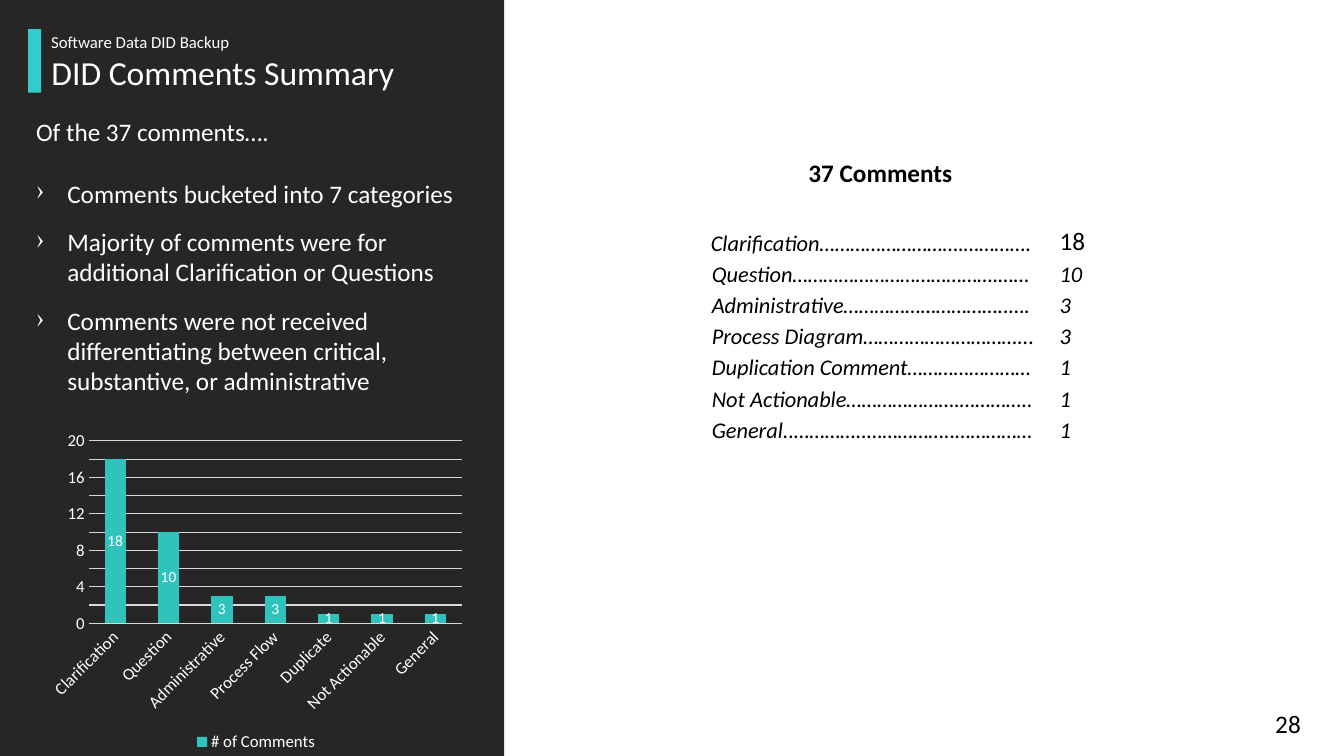
from dataclasses import dataclass

from lxml import etree
from pptx import Presentation
from pptx.chart.data import CategoryChartData
from pptx.dml.color import RGBColor
from pptx.enum.chart import XL_CHART_TYPE, XL_LABEL_POSITION, XL_LEGEND_POSITION, XL_TICK_MARK
from pptx.enum.shapes import MSO_SHAPE
from pptx.enum.text import MSO_ANCHOR, PP_ALIGN
from pptx.oxml.ns import qn
from pptx.util import Inches, Pt

RECTANGLE = MSO_SHAPE.RECTANGLE
TOP, BOTTOM = MSO_ANCHOR.TOP, MSO_ANCHOR.BOTTOM
LEFT = PP_ALIGN.LEFT
COLUMN_STACKED = XL_CHART_TYPE.COLUMN_STACKED
LABEL_CENTER = XL_LABEL_POSITION.CENTER
LEGEND_BOTTOM = XL_LEGEND_POSITION.BOTTOM
NO_TICK = XL_TICK_MARK.NONE


@dataclass(frozen=True)
class Theme:
    font: str = "Calibri"
    panel: RGBColor = RGBColor(0x26, 0x26, 0x26)
    accent: RGBColor = RGBColor(0x33, 0xCC, 0xCC)
    column: RGBColor = RGBColor(0x30, 0xC2, 0xBC)
    grid: RGBColor = RGBColor(0xD9, 0xD9, 0xD9)
    white: RGBColor = RGBColor(0xFF, 0xFF, 0xFF)
    black: RGBColor = RGBColor(0, 0, 0)
    title: int = 24
    body: int = 18
    table: int = 16
    small: int = 12
    label: int = 11


THEME = Theme()

BULLETS = [
    "Comments bucketed into 7 categories",
    "Majority of comments were for additional Clarification or Questions",
    "Comments were not received differentiating between critical, substantive, or administrative",
]
CHART_COUNTS = {
    "Clarification": 18, "Question": 10, "Administrative": 3, "Process Flow": 3,
    "Duplicate": 1, "Not Actionable": 1, "General": 1,
}
TABLE_ROWS = [
    ("Clarification……………………….………….", "18"),
    ("Question………………………………….……", "10"),
    ("Administrative…………………………..….", "3"),
    ("Process Diagram…………………………...", "3"),
    ("Duplication Comment……………………", "1"),
    ("Not Actionable………………….…………..", "1"),
    ("General..…………..……………..……………", "1"),
]


def style_font(font, size, color, bold=False, italic=False):
    font.name = THEME.font
    font.size = Pt(size)
    font.color.rgb = color
    font.bold = bold
    font.italic = italic


def add_run(paragraph, text, size, color, **emphasis):
    run = paragraph.add_run()
    run.text = text
    style_font(run.font, size, color, **emphasis)


def add_block(slide, box, color):
    block = slide.shapes.add_shape(RECTANGLE, *map(Inches, box))
    block.shadow.inherit = False
    block.fill.solid()
    block.fill.fore_color.rgb = color
    block.line.fill.background()
    return block


def add_text(slide, box, text, size, color, **emphasis):
    text_frame = slide.shapes.add_textbox(*map(Inches, box)).text_frame
    text_frame.word_wrap = True
    add_run(text_frame.paragraphs[0], text, size, color, **emphasis)
    return text_frame


def add_bullet(paragraph, indent):
    properties = paragraph._p.get_or_add_pPr()
    properties.set("marL", str(Inches(indent)))
    properties.set("indent", str(-Inches(indent)))
    etree.SubElement(properties, qn("a:buChar")).set("char", "›")


def build_header(slide, box):
    left, top, width, height = box
    bar_width = 0.13
    text_left = left + bar_width
    add_block(slide, (left, top, bar_width, height), THEME.accent)
    kicker = add_text(slide, (text_left, top, 4.73, 0.3), "Software Data DID Backup",
                      THEME.small, THEME.white)
    kicker.paragraphs[0].line_spacing = 0.9

    title = slide.shapes.title
    title.left, title.top = Inches(text_left), Inches(top + 0.22)
    title.width, title.height = Inches(width - bar_width), Inches(0.56)
    title.text_frame.vertical_anchor = TOP
    paragraph = title.text_frame.paragraphs[0]
    paragraph.alignment = LEFT
    paragraph.line_spacing = 0.9
    add_run(paragraph, "DID Comments Summary", THEME.title, THEME.white)


def build_findings(slide, box):
    text_frame = add_text(slide, box, "Of the 37 comments….", THEME.body, THEME.white)
    for index, bullet in enumerate(BULLETS):
        paragraph = text_frame.add_paragraph()
        add_bullet(paragraph, 0.31)
        paragraph.space_before = Pt(13 if index else 22)
        add_run(paragraph, bullet, THEME.body, THEME.white)


def set_plot_layout(chart, **fractions):
    plot_area = chart._chartSpace.chart.plotArea
    for old_layout in plot_area.findall(qn("c:layout")):
        plot_area.remove(old_layout)
    layout = etree.Element(qn("c:layout"))
    manual = etree.SubElement(layout, qn("c:manualLayout"))
    settings = {"layoutTarget": "inner", "xMode": "edge", "yMode": "edge", **fractions}
    for name, value in settings.items():
        etree.SubElement(manual, qn(f"c:{name}")).set("val", str(value))
    plot_area.insert(0, layout)


def build_chart(slide, box):
    data = CategoryChartData()
    data.categories = list(CHART_COUNTS)
    data.add_series("# of Comments", list(CHART_COUNTS.values()))
    chart = slide.shapes.add_chart(COLUMN_STACKED, *map(Inches, box), data).chart
    chart.has_title = False
    style_font(chart.font, THEME.small, THEME.white)
    set_plot_layout(chart, x=0.11, y=0.05, w=0.87, h=0.55)

    # Columns and their values
    plot = chart.plots[0]
    plot.gap_width, plot.overlap = 150, 100
    plot.vary_by_categories = False
    fill = plot.series[0].format.fill
    fill.solid()
    fill.fore_color.rgb = THEME.column
    plot.has_data_labels = True
    labels = plot.data_labels
    labels.show_value = True
    labels.position = LABEL_CENTER
    style_font(labels.font, THEME.label, THEME.white)

    # Axes
    for axis in (chart.category_axis, chart.value_axis):
        axis.major_tick_mark = axis.minor_tick_mark = NO_TICK
        style_font(axis.tick_labels.font, THEME.small, THEME.white)
    chart.category_axis.format.line.color.rgb = THEME.grid
    chart.category_axis.format.line.width = Pt(0.75)
    chart.category_axis._element.txPr.bodyPr.set("rot", "-2700000")
    value_axis = chart.value_axis
    value_axis.minimum_scale, value_axis.maximum_scale, value_axis.major_unit = 0, 20, 2
    value_axis.format.line.fill.background()
    value_axis.major_gridlines.format.line.color.rgb = THEME.grid
    value_axis.major_gridlines.format.line.width = Pt(0.75)

    # Legend
    chart.has_legend = True
    chart.legend.position = LEGEND_BOTTOM
    chart.legend.include_in_layout = False
    style_font(chart.legend.font, THEME.small, THEME.white)


def build_table(slide, box):
    column_widths = (0.41, 3.45, 1.39)
    table = slide.shapes.add_table(len(TABLE_ROWS), 3, *map(Inches, box)).table
    table.first_row = table.horz_banding = False
    for column, width in zip(table.columns, column_widths):
        column.width = Inches(width)
    for cell in table.iter_cells():
        cell.fill.solid()
        cell.fill.fore_color.rgb = THEME.white
        cell.vertical_anchor = BOTTOM
        cell.margin_left = cell.margin_right = cell.margin_top = Inches(0.01)
        cell.margin_bottom = 0
        end_properties = cell.text_frame.paragraphs[0]._p.get_or_add_endParaRPr()
        end_properties.set("sz", str(THEME.table * 100))

    # The leading category spans the indent column
    table.cell(0, 0).merge(table.cell(0, 1))
    table.cell(0, 0).margin_left = Inches(column_widths[0])
    for row, (category, count) in enumerate(TABLE_ROWS):
        leading = row == 0
        category_cell = table.cell(row, 0 if leading else 1)
        add_run(category_cell.text_frame.paragraphs[0], category,
                THEME.table, THEME.black, italic=True)
        add_run(table.cell(row, 2).text_frame.paragraphs[0], count,
                THEME.body if leading else THEME.table, THEME.black, italic=not leading)


def main():
    presentation = Presentation()
    presentation.slide_width, presentation.slide_height = Inches(13.33), Inches(7.5)
    slide = presentation.slides.add_slide(presentation.slide_layouts[5])

    # Dark panel, sent behind the title
    panel = add_block(slide, (0, 0, 5, 7.5), THEME.panel)
    slide.shapes._spTree.insert(2, panel._element)
    build_header(slide, (0.28, 0.29, 5.41, 0.63))
    build_findings(slide, (0.26, 1.11, 4.57, 3.3))
    build_chart(slide, (0.41, 4.21, 4.26, 3.29))

    # Comment counts and page number
    build_table(slide, (6.64, 2.24, 5.25, 2.17))
    add_text(slide, (7.92, 1.51, 1.76, 0.4), "37 Comments", THEME.body, THEME.black, bold=True)
    add_text(slide, (12.55, 6.98, 0.66, 0.4), "28", THEME.body, THEME.black)
    presentation.save("out.pptx")


if __name__ == "__main__":
    main()
